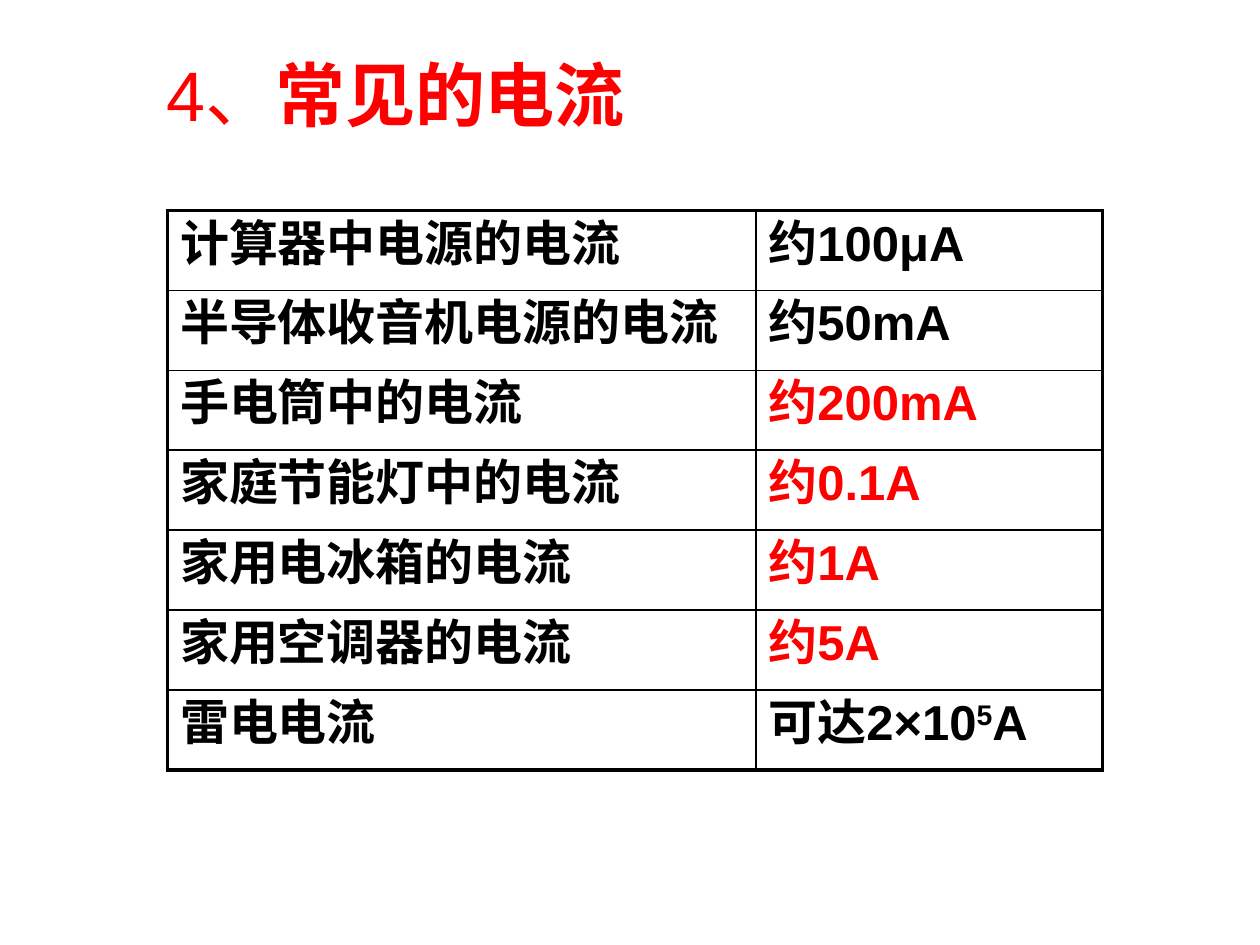
from lxml.etree import SubElement
from pptx import Presentation
from pptx.dml.color import RGBColor
from pptx.enum.text import MSO_ANCHOR, PP_ALIGN
from pptx.oxml.ns import qn
from pptx.util import Inches, Pt

COLORS = {"ink": "000000", "accent": "FF0000"}
FONT = "Arial"
THIN, THICK = 1, 2.25
COLUMN_WIDTHS = (4.67, 2.75)
ROW_HEIGHT = 4.44 / 7
CURRENTS = [
    ("计算器中电源的电流", ["约100μA"], "ink"),
    ("半导体收音机电源的电流", ["约50mA"], "ink"),
    ("手电筒中的电流", ["约200mA"], "accent"),
    ("家庭节能灯中的电流", ["约0.1A"], "accent"),
    ("家用电冰箱的电流", ["约1A"], "accent"),
    ("家用空调器的电流", ["约5A"], "accent"),
    ("雷电电流", ["可达2×10", "5", "A"], "ink"),
]


def add_span(para, text, size, color, bold):
    """Append a formatted run to a paragraph and return it."""
    span = para.add_run()
    span.text = text
    span.font.size = Pt(size)
    span.font.bold = bold
    span.font.name = FONT
    span.font.color.rgb = RGBColor.from_string(COLORS[color])
    SubElement(span.font._element, qn("a:ea"), typeface=FONT)
    return span


def add_title(page):
    """Place the heading in the title placeholder."""
    title = page.shapes.title
    title.left, title.top = Inches(1.22), Inches(0.36)
    title.width, title.height = Inches(4.42), Inches(0.77)
    frame = title.text_frame
    frame.vertical_anchor = MSO_ANCHOR.TOP
    para = frame.paragraphs[0]
    para.alignment = PP_ALIGN.LEFT
    add_span(para, "4、", 40, "accent", False)
    add_span(para, "常见的电流", 40, "accent", True)


def set_borders(cell, widths):
    """Draw the left, right, top and bottom borders of a cell."""
    properties = cell._tc.get_or_add_tcPr()
    for index, (side, width) in enumerate(zip("LRTB", widths)):
        line = SubElement(properties, qn(f"a:ln{side}"), w=str(Pt(width)))
        fill = SubElement(line, qn("a:solidFill"))
        SubElement(fill, qn("a:srgbClr"), val=COLORS["ink"])
        properties.insert(index, line)


def fill_cell(cell, parts, color):
    """Write a cell's text, raising the second part as an exponent."""
    cell.fill.background()
    para = cell.text_frame.paragraphs[0]
    para.space_before = Pt(5.6)
    for index, part in enumerate(parts):
        span = add_span(para, part, 28, color, True)
        if index == 1:
            span.font._element.set("baseline", "30000")


def add_current_table(page):
    """Build the table of common currents with a thick outer frame."""
    rows, columns = len(CURRENTS), len(COLUMN_WIDTHS)
    table = page.shapes.add_table(
        rows, columns, Inches(1.33), Inches(1.67),
        Inches(sum(COLUMN_WIDTHS)), Inches(ROW_HEIGHT * rows)).table
    table.first_row = table.horz_banding = False
    for column, width in zip(table.columns, COLUMN_WIDTHS):
        column.width = Inches(width)
    for row, (source, value, color) in enumerate(CURRENTS):
        table.rows[row].height = Inches(ROW_HEIGHT)
        for column, (parts, shade) in enumerate([([source], "ink"), (value, color)]):
            cell = table.cell(row, column)
            fill_cell(cell, parts, shade)
            outer = (column == 0, column == columns - 1, row == 0, row == rows - 1)
            set_borders(cell, [THICK if edge else THIN for edge in outer])


def main():
    """Create the slide and save it."""
    deck = Presentation()
    deck.slide_width, deck.slide_height = Inches(10), Inches(7.5)
    page = deck.slides.add_slide(deck.slide_layouts[5])
    add_title(page)
    add_current_table(page)
    deck.save("out.pptx")


if __name__ == "__main__":
    main()
